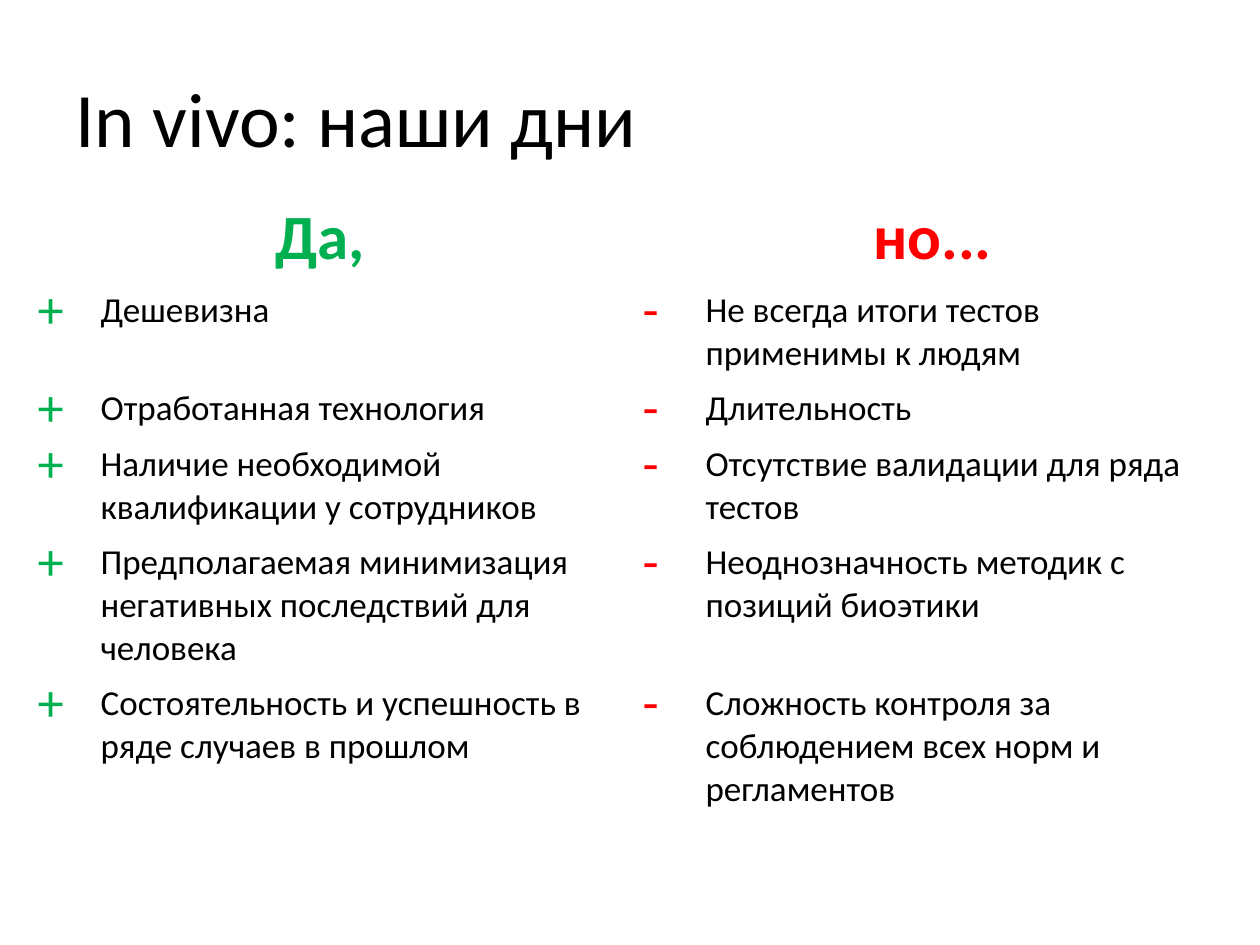
from typing import NamedTuple

from lxml.etree import SubElement
from pptx import Presentation
from pptx.dml.color import RGBColor
from pptx.enum.text import MSO_ANCHOR as Anchor, PP_ALIGN as Align
from pptx.oxml.ns import qn
from pptx.util import Emu, Pt

PX = 914400 // 126
FONT = "Calibri"
BLACK = "000000"
INDENT = 63
ROW_HEIGHTS = [79, 87, 49, 87, 125, 219]


class Column(NamedTuple):
    heading: str
    bullet: str
    color: str
    points: list[str]


COLUMNS = [
    Column("Да, ", "+", "00B050", [
        "Дешевизна",
        "Отработанная технология",
        "Наличие необходимой квалификации у сотрудников",
        "Предполагаемая минимизация негативных последствий для человека",
        "Состоятельность и успешность в ряде случаев в прошлом",
    ]),
    Column("но...", "-", "FF0000", [
        "Не всегда итоги тестов применимы к людям",
        "Длительность",
        "Отсутствие валидации для ряда тестов",
        "Неоднозначность методик с позиций биоэтики",
        "Сложность контроля за соблюдением всех норм и регламентов",
    ]),
]


def px(n: int) -> Emu:
    return Emu(n * PX)


def rgb(color: str) -> RGBColor:
    return RGBColor.from_string(color)


def add_run(p, text: str, size: int, color: str, bold: bool = False) -> None:
    r = p.add_run()
    r.text = text
    r.font.name = FONT
    r.font.size = Pt(size)
    r.font.bold = bold
    r.font.color.rgb = rgb(color)


def add_bullet(p, char: str, color: str) -> None:
    """Hanging bullet at 150 % of the text size."""
    p.space_after = Pt(12)
    pPr = p._p.get_or_add_pPr()
    pPr.set("marL", str(px(INDENT)))
    pPr.set("indent", str(-px(INDENT)))
    SubElement(SubElement(pPr, qn("a:buClr")), qn("a:srgbClr"), val=color)
    SubElement(pPr, qn("a:buSzPct"), val="150000")
    SubElement(pPr, qn("a:buFont"), typeface=FONT)
    SubElement(pPr, qn("a:buChar"), char=char)


def add_title(s, text: str) -> None:
    sp = s.shapes.title
    sp.left, sp.top, sp.width, sp.height = px(63), px(38), px(1134), px(157)
    tf = sp.text_frame
    tf.vertical_anchor = Anchor.MIDDLE
    p = tf.paragraphs[0]
    p.alignment = Align.LEFT
    add_run(p, text, 44, BLACK)


def fill_column(table, index: int, column: Column) -> None:
    p = table.cell(0, index).text_frame.paragraphs[0]
    p.alignment = Align.CENTER
    add_run(p, column.heading, 36, column.color, bold=True)
    for row, point in enumerate(column.points, start=1):
        p = table.cell(row, index).text_frame.paragraphs[0]
        add_bullet(p, column.bullet, column.color)
        add_run(p, point, 20, BLACK)


def add_comparison(s, columns: list[Column]) -> None:
    frame = s.shapes.add_table(len(ROW_HEIGHTS), len(columns),
                               px(25), px(193), px(1210), px(693))
    table = frame.table
    table.horz_banding = False
    for row, height in zip(table.rows, ROW_HEIGHTS):
        row.height = px(height)
    for cell in table.iter_cells():
        cell.fill.background()
    for index, column in enumerate(columns):
        fill_column(table, index, column)
    frame.height = px(693)


def main() -> None:
    prs = Presentation()
    prs.slide_width, prs.slide_height = px(1260), px(945)
    s = prs.slides.add_slide(prs.slide_layouts[5])  # title only
    add_title(s, "In vivo: наши дни")
    add_comparison(s, COLUMNS)
    prs.save("out.pptx")


if __name__ == "__main__":
    main()
